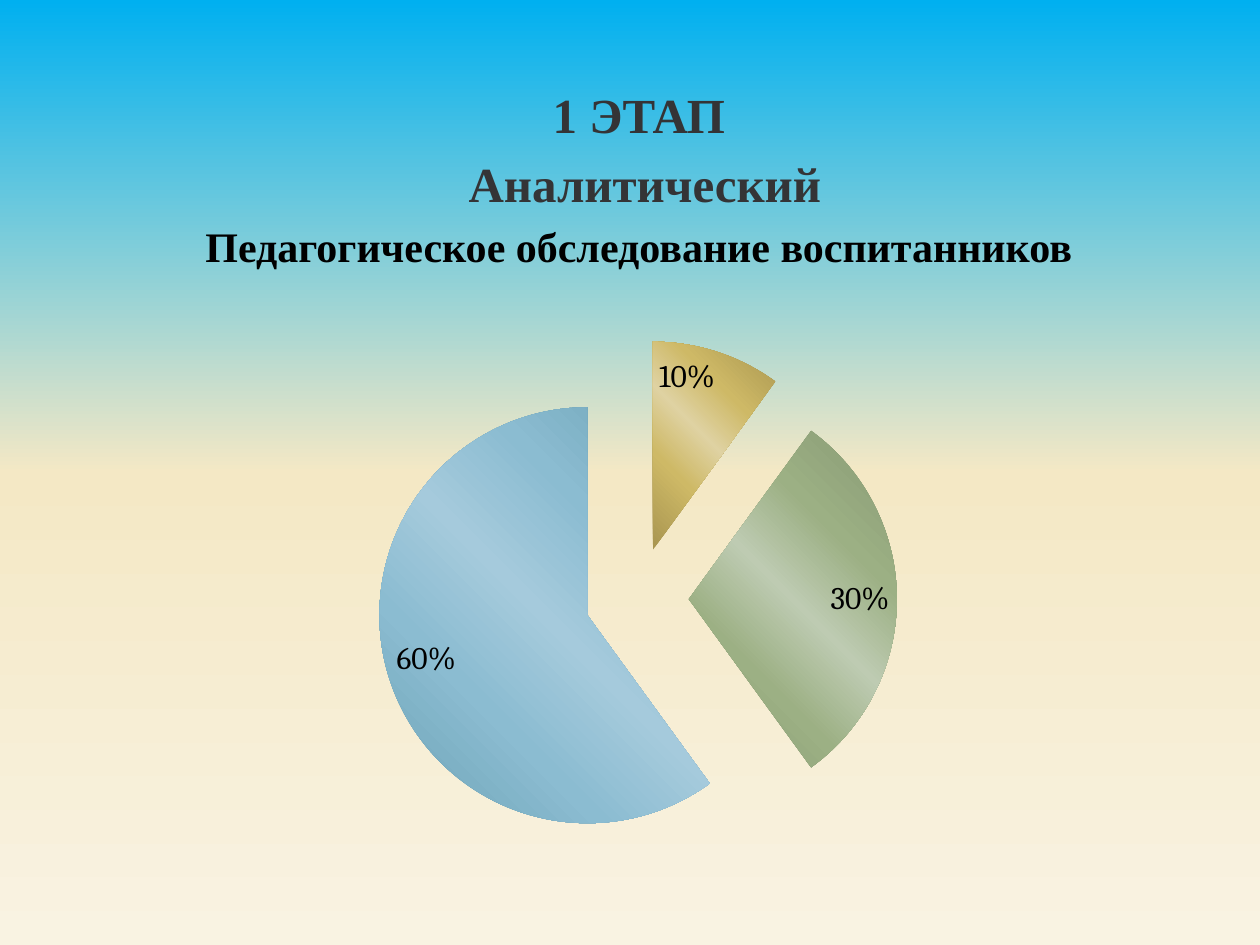
from copy import deepcopy
from lxml import etree
from pptx import Presentation
from pptx.chart.data import CategoryChartData
from pptx.dml.color import RGBColor
from pptx.enum.chart import XL_CHART_TYPE, XL_LABEL_POSITION
from pptx.enum.text import MSO_ANCHOR, PP_ALIGN
from pptx.oxml import parse_xml
from pptx.oxml.ns import nsdecls, qn
from pptx.util import Inches, Pt

BLACK = RGBColor(0x00, 0x00, 0x00)
GRAY = RGBColor(0x34, 0x34, 0x36)
SKY = RGBColor(0x00, 0xB0, 0xF0)
SAND = RGBColor(0xF4, 0xE8, 0xC5)
CREAM = RGBColor(0xF9, 0xF3, 0xE2)
GOLD = [RGBColor(0xA8, 0x95, 0x50), RGBColor(0xCE, 0xB9, 0x66), RGBColor(0xDF, 0xD2, 0xA2)]
GREEN = [RGBColor(0x86, 0x98, 0x73), RGBColor(0x9C, 0xB0, 0x84), RGBColor(0xBE, 0xCB, 0xB2)]
BLUE = [RGBColor(0x6A, 0xA0, 0xB3), RGBColor(0x8B, 0xBC, 0xD1), RGBColor(0xA5, 0xCA, 0xDC)]


def shade(fill, stops, angle):
    fill.gradient()
    fill.gradient_angle = angle
    first = fill.gradient_stops[0]._gs
    for _ in stops[2:]:
        first.addnext(deepcopy(first))
    for stop, (place, color) in zip(fill.gradient_stops, stops):
        stop.position = place
        stop.color.rgb = color


deck = Presentation()
deck.slide_width, deck.slide_height = Inches(10), Inches(7.5)
slide = deck.slides.add_slide(deck.slide_layouts[1])
shade(slide.background.fill, [(0, SKY), (0.5, SAND), (1, CREAM)], 270)

title = slide.shapes.title._element
title.getparent().remove(title)

body = slide.placeholders[1]
body.left, body.top = Inches(0.78), Inches(0.62)
body.width, body.height = Inches(8.5), Inches(6.25)
frame = body.text_frame
frame.vertical_anchor = MSO_ANCHOR.TOP
lines = [
    ("1 ЭТАП", 28, GRAY),
    (" Аналитический", 28, GRAY),
    ("Педагогическое обследование воспитанников", 24, BLACK),
]
for i, (text, size, color) in enumerate(lines):
    para = frame.add_paragraph() if i else frame.paragraphs[0]
    para.alignment = PP_ALIGN.CENTER
    para.space_before = Pt(size * 0.2)
    props = para._p.get_or_add_pPr()
    props.set("marL", str(Inches(0.08)))
    props.set("indent", "0")
    etree.SubElement(props, qn("a:buNone"))
    run = para.add_run()
    run.text = text
    style = {"name": "Times New Roman", "size": Pt(size), "bold": True}
    for key, value in style.items():
        setattr(run.font, key, value)
    run.font.color.rgb = color

data = CategoryChartData(number_format="0%")
data.categories = ["1", "2", "3"]
data.add_series("Series 1", [0.1, 0.3, 0.6])
chart = slide.shapes.add_chart(
    XL_CHART_TYPE.PIE_EXPLODED, Inches(1.72), Inches(2.27), Inches(6.67), Inches(4.69), data
).chart
chart.has_title = False
chart.has_legend = False
chart.font.name = "Cambria"
chart.font.size = Pt(18)

area = chart._chartSpace.chart.plotArea
for old in area.findall(qn("c:layout")):
    area.remove(old)
spots = {"x": 0.19, "y": 0.09, "w": 0.62, "h": 0.88}
area.insert(0, parse_xml(
    f'<c:layout {nsdecls("c")}><c:manualLayout><c:layoutTarget val="inner"/>'
    '<c:xMode val="edge"/><c:yMode val="edge"/>'
    + "".join(f'<c:{key} val="{value}"/>' for key, value in spots.items())
    + "</c:manualLayout></c:layout>"
))

plot = chart.plots[0]
plot.vary_by_categories = True
series = plot.series[0]
for node in series._element.findall(qn("c:explosion")):
    node.set("val", "25")
for i, (dark, base, light) in enumerate([GOLD, GREEN, BLUE]):
    look = series.points[i].format
    shade(look.fill, [(0, dark), (0.3, base), (0.5, light), (0.7, base), (1, dark)], 45)
    look.line.fill.background()
    etree.SubElement(look.fill.gradient_stops[0]._gs.getparent().getparent().getparent(), qn("a:effectLst"))
for dpt in series._element.findall(qn("c:dPt")):
    boom = etree.Element(qn("c:explosion"), val="25")
    dpt.find(qn("c:spPr")).addprevious(boom)

plot.has_data_labels = True
labels = plot.data_labels
marks = {
    "show_value": True,
    "show_percentage": False,
    "number_format": "0%",
    "number_format_is_linked": False,
    "position": XL_LABEL_POSITION.INSIDE_END,
}
for key, value in marks.items():
    setattr(labels, key, value)
labels.font.name = "Cambria"
labels.font.size = Pt(18)
labels.font.color.rgb = BLACK

deck.save("out.pptx")
